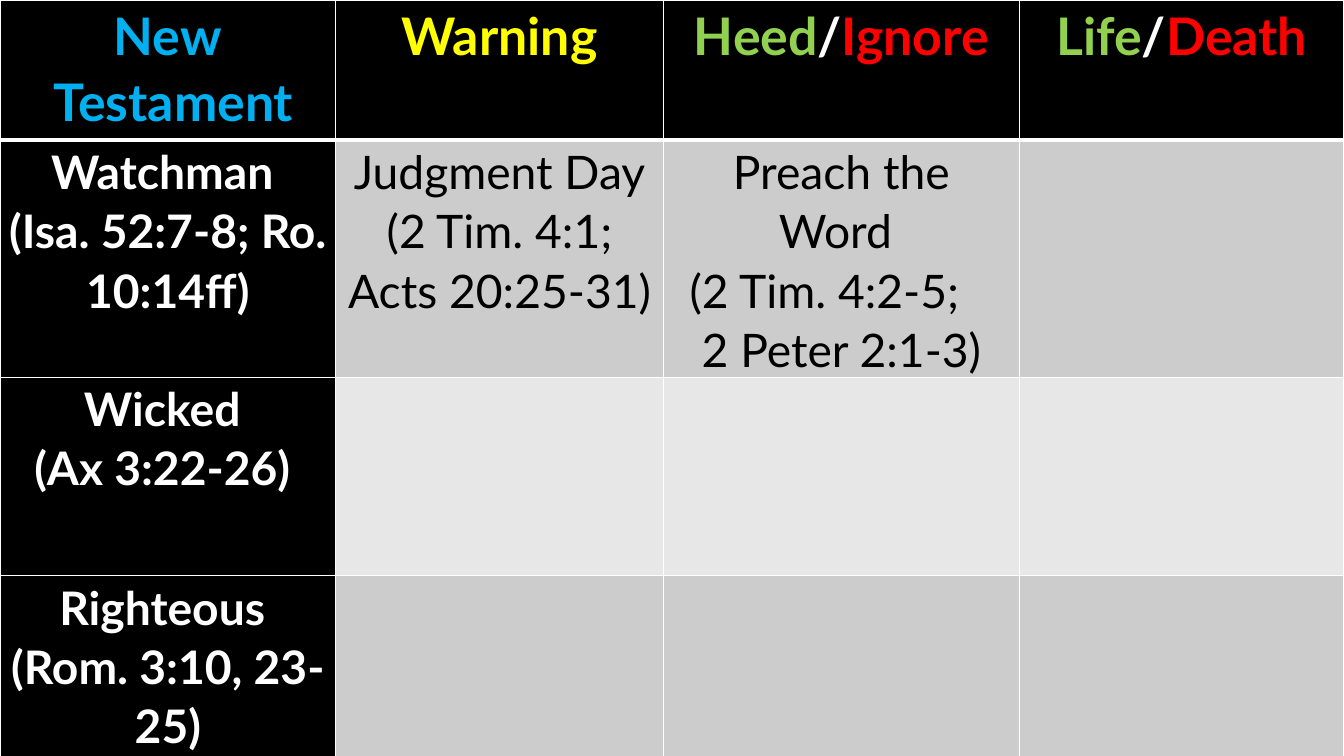
from pptx import Presentation
from pptx.dml.color import RGBColor
from pptx.enum.text import PP_ALIGN
from pptx.oxml.ns import qn
from pptx.util import Inches, Pt
from lxml import etree

COLORS = {
    "black": "000000", "white": "FFFFFF", "blue": "00B0F0", "yellow": "FFFF00",
    "green": "92D050", "red": "FF0000", "dark band": "CCCCCC", "light band": "E7E7E7",
}
# Each heading is a list of lines; each line is a list of (words, color).
HEADINGS = [
    [[("New", "blue")], [(" Testament", "blue")]],
    [[("Warning", "yellow")]],
    [[("Heed", "green"), ("/", "white"), ("Ignore", "red")]],
    [[("Life", "green"), ("/", "white"), ("Death", "red")]],
]
# Each body row holds four cells, each a list of lines.
AUDIENCES = [
    [["Watchman ", "(Isa. 52:7-8; Ro. 10:14ff)"],
     ["Judgment Day", "(2 Tim. 4:1; Acts 20:25-31)"],
     ["Preach the Word ", "(2 Tim. 4:2-5;", "2 Peter 2:1-3)"], []],
    [["Wicked ", "(Ax 3:22-26) "], [], [], []],
    [["Righteous ", "(Rom. 3:10, 23-25)"], [], [], []],
]
LEFT_INDENTS = {"(2 Tim. 4:2-5;": 0.16}  # these lines are left-aligned
COLUMN_WIDTHS = [3.33, 3.25, 3.53, 3.22]
SIDE_MARGINS = [0.07, 0.07, 0.1, 0.07]
ROW_HEIGHTS = [1.39, 2.09, 1.97, 2.38]


def set_borders(cell, bottom_width, top_width):
    properties = cell._tc.get_or_add_tcPr()
    for side, width in zip("LRTB", (1, 1, top_width, bottom_width)):
        line = etree.SubElement(properties, qn(f"a:ln{side}"), w=str(Pt(width)))
        fill = etree.SubElement(line, qn("a:solidFill"))
        etree.SubElement(fill, qn("a:srgbClr"), val=COLORS["white"])


def write_lines(cell, lines, size, bold):
    for number, line in enumerate(lines):
        frame = cell.text_frame
        paragraph = frame.add_paragraph() if number else frame.paragraphs[0]
        paragraph.alignment = PP_ALIGN.CENTER
        paragraph.line_spacing = 1.07
        for words, color in line:
            # Run-level fonts override the table style.
            run = paragraph.add_run()
            run.text = words
            run.font.name = "Lato"
            run.font.size = Pt(size)
            run.font.bold = bold
            run.font.color.rgb = RGBColor.from_string(COLORS[color])
            if words in LEFT_INDENTS:
                paragraph.alignment = PP_ALIGN.LEFT
                indent = Inches(LEFT_INDENTS[words])
                paragraph._p.get_or_add_pPr().set("marL", str(indent))


def main():
    deck = Presentation()
    deck.slide_width, deck.slide_height = Inches(13.33), Inches(7.5)
    slide = deck.slides.add_slide(deck.slide_layouts[6])
    table = slide.shapes.add_table(
        len(ROW_HEIGHTS), len(COLUMN_WIDTHS), 0, 0,
        Inches(sum(COLUMN_WIDTHS)), Inches(sum(ROW_HEIGHTS))).table
    for column, width in zip(table.columns, COLUMN_WIDTHS):
        column.width = Inches(width)
    for row, height in zip(table.rows, ROW_HEIGHTS):
        row.height = Inches(height)

    for r, contents in enumerate([HEADINGS] + AUDIENCES):
        for c, lines in enumerate(contents):
            cell = table.cell(r, c)
            cell.margin_left = cell.margin_right = Inches(SIDE_MARGINS[c])
            cell.margin_top = cell.margin_bottom = 0
            set_borders(cell, 3 if r == 0 else 1, 3 if r == 1 else 1)
            heading = r == 0 or c == 0
            band = "black" if heading else "dark band" if r % 2 else "light band"
            cell.fill.solid()
            cell.fill.fore_color.rgb = RGBColor.from_string(COLORS[band])
            if r:
                color = "white" if heading else "black"
                lines = [[(words, color)] for words in lines]
            write_lines(cell, lines, 33 if r else 37, heading)
    deck.save("out.pptx")


if __name__ == "__main__":
    main()
